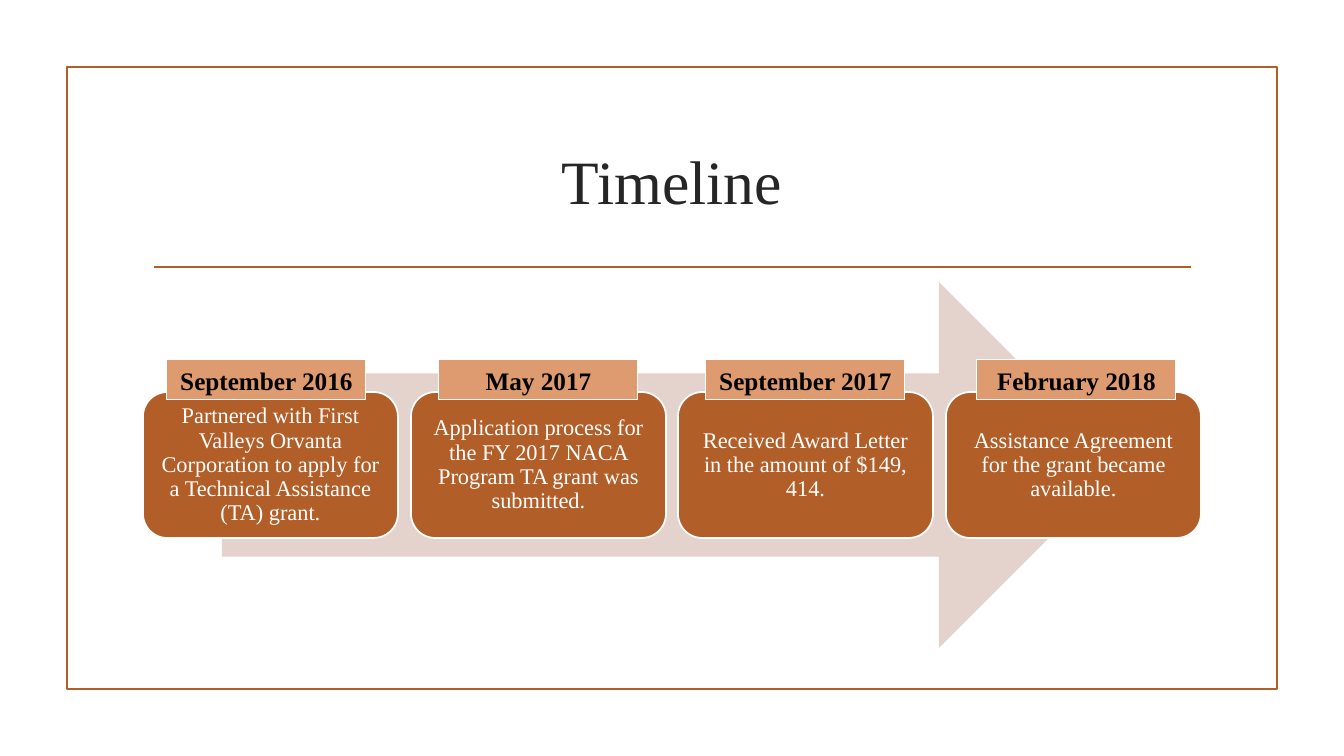
from lxml import etree
from pptx import Presentation
from pptx.dml.color import RGBColor
from pptx.enum.shapes import MSO_CONNECTOR, MSO_SHAPE
from pptx.enum.text import MSO_ANCHOR, PP_ALIGN
from pptx.oxml.ns import qn
from pptx.util import Pt

EMU_PER_PX = 914400 / 100.8
RECT = MSO_SHAPE.RECTANGLE
ROUNDED = MSO_SHAPE.ROUNDED_RECTANGLE
ARROW = MSO_SHAPE.RIGHT_ARROW
STRAIGHT = MSO_CONNECTOR.STRAIGHT
CENTER = PP_ALIGN.CENTER
MIDDLE = MSO_ANCHOR.MIDDLE
TITLE_ONLY = 5

COLORS = {
    "rust": "B15E28",
    "peach": "DF9B70",
    "blush": "E4D2CD",
    "ink": "262626",
    "black": "000000",
    "white": "FFFFFF",
}

# Date, left edge of its tag, event
MILESTONES = [
    ("September 2016", 167,
     "Partnered with First Valleys Orvanta Corporation to apply for "
     "a Technical Assistance (TA) grant."),
    ("May 2017", 439,
     "Application process for the FY 2017 NACA Program TA grant was submitted."),
    ("September 2017", 706, "Received Award Letter in the amount of $149, 414."),
    ("February 2018", 977, "Assistance Agreement for the grant became available."),
]
CARD_LEFT, CARD_SPAN = 143, 803


def px(length):
    return round(length * EMU_PER_PX)


def color(name):
    return RGBColor.from_string(COLORS[name])


class TimelineSlide:
    font = "Times New Roman"

    def __init__(self, deck):
        self.slide = deck.slides.add_slide(deck.slide_layouts[TITLE_ONLY])

    def set_text(self, holder, text, size, ink, bold=False, spacing=1.0, margins=(10, 5)):
        """Fill a shape with one centred paragraph; margins are (side, top and bottom)."""
        frame = holder.text_frame
        frame.word_wrap = True
        frame.vertical_anchor = MIDDLE
        frame.margin_left = frame.margin_right = px(margins[0])
        frame.margin_top = frame.margin_bottom = px(margins[1])
        paragraph = frame.paragraphs[0]
        paragraph.alignment = CENTER
        paragraph.line_spacing = spacing
        run = paragraph.add_run()
        run.text = text
        run.font.name = self.font
        run.font.size = Pt(size)
        run.font.bold = bold
        run.font.color.rgb = color(ink)

    def title(self, text, left, top, width, height):
        heading = self.slide.shapes.title
        heading.left, heading.top = px(left), px(top)
        heading.width, heading.height = px(width), px(height)
        self.set_text(heading, text, size=44, ink="ink")

    def shape(self, preset, left, top, width, height, fill=None, line=None, weight=1.25):
        shape = self.slide.shapes.add_shape(
            preset, px(left), px(top), px(width), px(height))
        shape.shadow.inherit = False
        if fill:
            shape.fill.solid()
            shape.fill.fore_color.rgb = color(fill)
        else:
            shape.fill.background()
        if line:
            shape.line.color.rgb = color(line)
            shape.line.width = Pt(weight)
        else:
            shape.line.fill.background()
        return shape

    def rule(self, left, right, y, line, weight=1.25):
        rule = self.slide.shapes.add_connector(
            STRAIGHT, px(left), px(y), px(right), px(y))
        rule.line.color.rgb = color(line)
        rule.line.width = Pt(weight)
        etree.SubElement(rule._element.spPr, qn("a:effectLst"))

    def card(self, left, event):
        card = self.shape(ROUNDED, left, 392, 255, 146, fill="rust", line="white")
        self.set_text(card, event, size=16, ink="white", spacing=0.9, margins=(7, 7))

    def date_tag(self, left, date):
        tag = self.shape(RECT, left, 360, 199, 40, fill="peach", line="white", weight=0.75)
        self.set_text(tag, date, size=18, ink="black", bold=True)


def main():
    deck = Presentation()
    deck.slide_width, deck.slide_height = px(1344), px(756)
    timeline = TimelineSlide(deck)
    timeline.shape(RECT, 67, 67, 1210, 622, line="rust")
    timeline.rule(154, 1191, 267, line="rust")
    timeline.title("Timeline", 143, 108, 1058, 144)
    timeline.shape(ARROW, 222, 282, 900, 366, fill="blush")
    last = len(MILESTONES) - 1
    for index, (date, tag_left, event) in enumerate(MILESTONES):
        timeline.card(CARD_LEFT + round(index * CARD_SPAN / last), event)
        timeline.date_tag(tag_left, date)
    deck.save("out.pptx")


if __name__ == "__main__":
    main()
